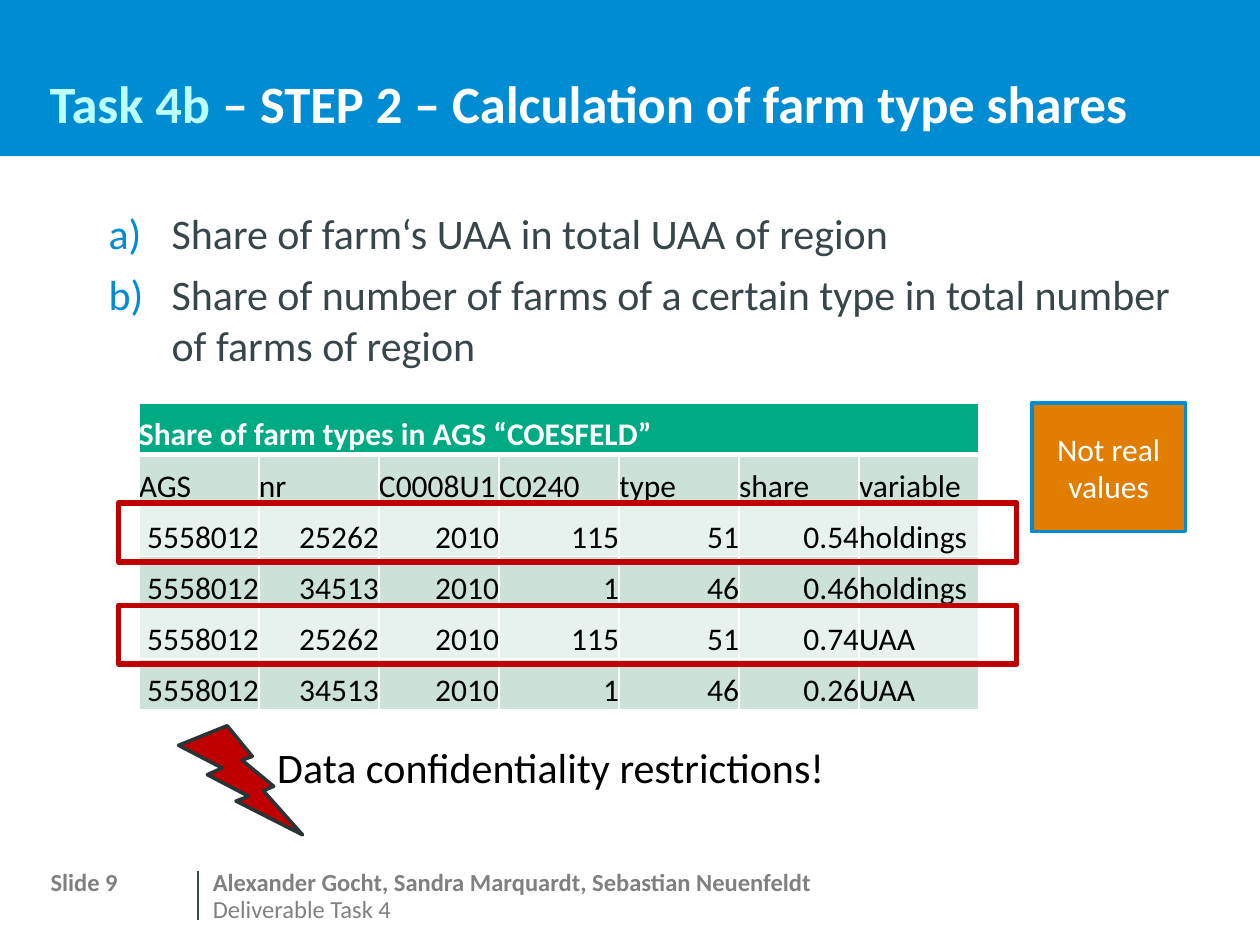
"""Build the slide on the calculation of farm type shares."""
import lxml.etree
import pptx
import pptx.dml.color
import pptx.enum.shapes
import pptx.enum.text
import pptx.oxml
import pptx.oxml.ns
import pptx.util

Cm = pptx.util.Cm
Pt = pptx.util.Pt
RGBColor = pptx.dml.color.RGBColor
SHAPE = pptx.enum.shapes.MSO_SHAPE
ALIGN = pptx.enum.text.PP_ALIGN
ANCHOR = pptx.enum.text.MSO_ANCHOR
qn = pptx.oxml.ns.qn

BLUE = RGBColor(0x00, 0x8C, 0xD2)
AQUA = RGBColor(0xBB, 0xFF, 0xFF)
WHITE = RGBColor(0xFF, 0xFF, 0xFF)
BLACK = RGBColor(0x00, 0x00, 0x00)
SLATE = RGBColor(0x37, 0x46, 0x4B)
INK = RGBColor(0x29, 0x34, 0x37)
GREY = RGBColor(0x80, 0x80, 0x80)
GREEN = RGBColor(0x00, 0xAA, 0x82)
BAND_DARK = RGBColor(0xCC, 0xE2, 0xD8)
BAND_LIGHT = RGBColor(0xE7, 0xF1, 0xED)
RED = RGBColor(0xC0, 0x00, 0x00)
ORANGE = RGBColor(0xE1, 0x7D, 0x00)

TITLE = [("Task 4b ", AQUA), ("– STEP 2 – Calculation of farm type shares", WHITE)]
SHARES = [
    "Share of farm‘s UAA in total UAA of region",
    "Share of number of farms of a certain type in total number of farms of region",
]
TABLE_TITLE = "Share of farm types in AGS “COESFELD”"
TABLE_ROWS = [
    ("AGS", "nr", "C0008U1", "C0240", "type", "share", "variable"),
    ("5558012", "25262", "2010", "115", "51", "0.54", "holdings"),
    ("5558012", "34513", "2010", "1", "46", "0.46", "holdings"),
    ("5558012", "25262", "2010", "115", "51", "0.74", "UAA"),
    ("5558012", "34513", "2010", "1", "46", "0.26", "UAA"),
]
HIGHLIGHTED_ROWS = (2, 4)
WARNING = "Data confidentiality restrictions!"
NOTE = "Not real values"
FOOTER = [
    ("Slide 9", True, (1.02, 17.47, 2.7, 0.51)),
    ("Alexander Gocht, Sandra Marquardt, Sebastian Neuenfeldt", True, (4.29, 17.47, 16.84, 0.76)),
    ("Deliverable Task 4", False, (4.29, 18.02, 16.84, 0.76)),
]

TABLE_LEFT, TABLE_TOP = 2.8, 8.13
COLUMN_WIDTH, ROW_HEIGHT = 2.42, 1.03
NO_MARGINS = dict.fromkeys(("margin_left", "margin_top", "margin_right", "margin_bottom"), 0)


def apply(target, values):
    for name, value in values.items():
        setattr(target, name, value)


def add_run(paragraph, text, size, color, bold=False):
    run = paragraph.add_run()
    run.text = text
    apply(run.font, {"name": "Calibri", "size": Pt(size), "bold": bold})
    run.font.color.rgb = color


def add_text_box(slide, box, **frame_format):
    frame = slide.shapes.add_textbox(*map(Cm, box)).text_frame
    apply(frame, {**NO_MARGINS, "word_wrap": True, **frame_format})
    return frame


def add_box(slide, kind, box, fill=None, line=None, width=0):
    shape = slide.shapes.add_shape(kind, *map(Cm, box))
    shape.shadow.inherit = False
    if fill is None:
        shape.fill.background()
    else:
        shape.fill.solid()
        shape.fill.fore_color.rgb = fill
    if line is None:
        shape.line.fill.background()
    else:
        shape.line.color.rgb = line
        shape.line.width = Pt(width)
    return shape


def add_letter_bullet(paragraph, indent, hanging):
    properties = paragraph._p.get_or_add_pPr()
    properties.set("marL", str(Cm(indent)))
    properties.set("indent", str(-Cm(hanging)))
    color = lxml.etree.SubElement(properties, qn("a:buClr"))
    lxml.etree.SubElement(color, qn("a:srgbClr"), val=str(BLUE))
    lxml.etree.SubElement(properties, qn("a:buFont"), typeface="Calibri")
    lxml.etree.SubElement(properties, qn("a:buAutoNum"), type="alphaLcParenR")


def set_borders(cell, widths):
    properties = cell._tc.get_or_add_tcPr()
    for side, width in zip("LRTB", widths):
        border = lxml.etree.SubElement(properties, qn(f"a:ln{side}"), w=str(Pt(width)))
        fill = lxml.etree.SubElement(border, qn("a:solidFill"))
        lxml.etree.SubElement(fill, qn("a:srgbClr"), val=str(WHITE))


def format_cell(cell, fill, borders):
    apply(cell, {**NO_MARGINS, "vertical_anchor": ANCHOR.BOTTOM})
    set_borders(cell, borders)
    cell.fill.solid()
    cell.fill.fore_color.rgb = fill


def add_share_table(slide):
    columns, rows = len(TABLE_ROWS[0]), len(TABLE_ROWS) + 1
    box = (TABLE_LEFT, TABLE_TOP, columns * COLUMN_WIDTH, rows * ROW_HEIGHT)
    table = slide.shapes.add_table(rows, columns, *map(Cm, box)).table
    for column in table.columns:
        column.width = Cm(COLUMN_WIDTH)
    for row in table.rows:
        row.height = Cm(ROW_HEIGHT)
    for column in range(columns):
        format_cell(table.cell(0, column), GREEN, (1, 1, 1, 3))
    table.cell(0, 0).merge(table.cell(0, columns - 1))
    add_run(table.cell(0, 0).text_frame.paragraphs[0], TABLE_TITLE, 18, WHITE, True)
    for row, values in enumerate(TABLE_ROWS, 1):
        for column, value in enumerate(values):
            cell = table.cell(row, column)
            format_cell(cell, BAND_DARK if row % 2 else BAND_LIGHT, (1, 1, 3 if row == 1 else 1, 1))
            paragraph = cell.text_frame.paragraphs[0]
            is_number = row > 1 and column < columns - 1
            paragraph.alignment = ALIGN.RIGHT if is_number else ALIGN.LEFT
            add_run(paragraph, value, 18, BLACK)


def add_footer(slide):
    for text, bold, box in FOOTER:
        add_run(add_text_box(slide, box).paragraphs[0], text, 14, GREY, bold)
    divider = slide.shapes.add_connector(
        pptx.enum.shapes.MSO_CONNECTOR.STRAIGHT, *map(Cm, (3.99, 17.55, 3.99, 18.54)))
    divider.line.color.rgb = SLATE
    divider.line.width = Pt(0.75)
    lxml.etree.SubElement(divider._element.spPr, qn("a:effectLst"))


def add_header(slide):
    add_box(slide, SHAPE.RECTANGLE, (0, -0.05, 25.4, 3.2), BLUE)
    frame = add_text_box(slide, (1, 0, 23.4, 2.7), vertical_anchor=ANCHOR.BOTTOM)
    frame.paragraphs[0].line_spacing = Pt(35)
    for text, color in TITLE:
        add_run(frame.paragraphs[0], text, 30, color, True)


def add_share_list(slide):
    frame = add_text_box(slide, (1, 4.19, 23.3, 3.7))
    for index, text in enumerate(SHARES):
        paragraph = frame.add_paragraph() if index else frame.paragraphs[0]
        add_letter_bullet(paragraph, 2.46, 1.27)
        paragraph.space_after = Pt(6)
        add_run(paragraph, text, 24, SLATE)


def add_warning(slide):
    paragraph = add_text_box(slide, (5.59, 15.11, 14.91, 2.18)).paragraphs[0]
    apply(paragraph, {"line_spacing": Pt(24), "space_after": Pt(12)})
    add_run(paragraph, WARNING, 24, BLACK)
    add_box(slide, SHAPE.LIGHTNING_BOLT, (3.6, 14.63, 2.5, 2.2), RED, INK, 2)


def add_marks(slide):
    note = add_box(slide, SHAPE.RECTANGLE, (20.8, 8.13, 3.1, 2.59), ORANGE, BLUE, 2)
    apply(note.text_frame, {"word_wrap": True, "vertical_anchor": ANCHOR.MIDDLE})
    paragraph = note.text_frame.paragraphs[0]
    paragraph.alignment = ALIGN.CENTER
    add_run(paragraph, NOTE, 18, WHITE)
    for row in HIGHLIGHTED_ROWS:
        top = TABLE_TOP + row * ROW_HEIGHT - 0.05
        add_box(slide, SHAPE.RECTANGLE, (2.39, top, 18.11, 1.19), line=RED, width=3)


def main():
    presentation = pptx.Presentation()
    apply(presentation, {"slide_width": Cm(25.4), "slide_height": Cm(19.05)})
    slide = presentation.slides.add_slide(presentation.slide_layouts[6])
    for add_part in (add_footer, add_header, add_share_list, add_share_table, add_warning, add_marks):
        add_part(slide)
    presentation.save("out.pptx")


if __name__ == "__main__":
    main()
